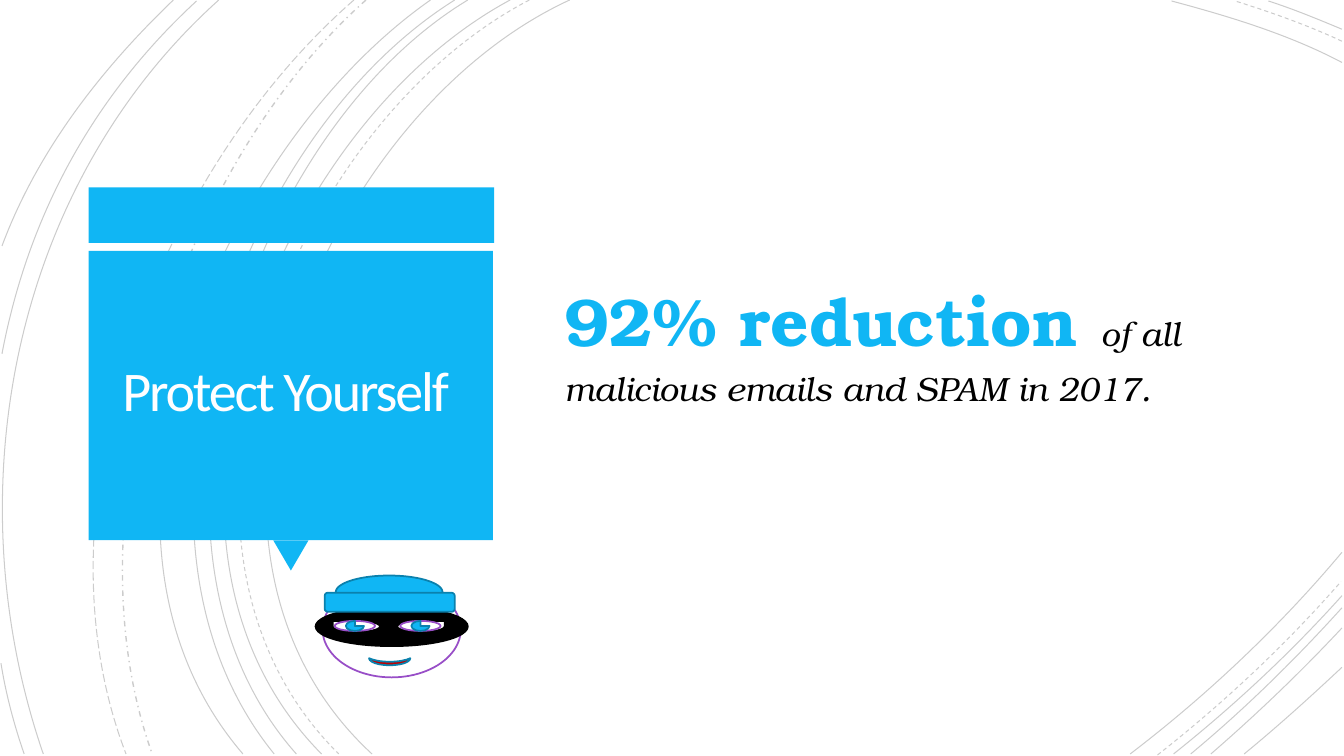
"""Build the slide on protection against malicious mail."""
from dataclasses import dataclass

from lxml import etree
from pptx import Presentation
from pptx.dml.color import RGBColor
from pptx.enum.dml import MSO_LINE
from pptx.enum.shapes import MSO_SHAPE
from pptx.enum.text import MSO_ANCHOR, MSO_AUTO_SIZE, PP_ALIGN
from pptx.oxml.ns import qn
from pptx.util import Cm, Pt

SOLID, DASH = MSO_LINE.SOLID, MSO_LINE.DASH
DOT, LONG = MSO_LINE.DASH_DOT, MSO_LINE.LONG_DASH
RECT, ROUND, OVAL = MSO_SHAPE.RECTANGLE, MSO_SHAPE.ROUNDED_RECTANGLE, MSO_SHAPE.OVAL
WEDGE, TEAR = MSO_SHAPE.ISOSCELES_TRIANGLE, MSO_SHAPE.TEAR
MOON, PIE = MSO_SHAPE.MOON, MSO_SHAPE.PIE
TOP, MIDDLE = MSO_ANCHOR.TOP, MSO_ANCHOR.MIDDLE
LEFT, CENTER = PP_ALIGN.LEFT, PP_ALIGN.CENTER


@dataclass(frozen=True)
class Theme:
    """Colours, fonts and type sizes."""
    blue: str = "10B6F4"
    edge: str = "0B81AD"
    plum: str = "984EC7"
    red: str = "C00000"
    black: str = "000000"
    white: str = "FFFFFF"
    pale: str = "FFFEFF"
    sans: str = "Calibri"
    serif: str = "TeX Gyre Bonum"
    head: int = 40
    big: int = 48
    body: int = 24
    thin: float = 0.75
    pen: float = 1.25


T = Theme()
INCH = 2.54

TITLE = [("Protect Yourself ", dict(size=T.head, font=T.sans, color=T.pale, track=-150))]
CLAIM = [
    ("92% reduction ", dict(size=T.big, font=T.serif, color=T.blue, bold=True)),
    ("of all malicious emails and SPAM in 2017.",
     dict(size=T.body, font=T.serif, color=T.black, italic=True)),
]
TITLE_BOX = (0.97, 2.56, 3.83, 2.7)
CLAIM_BOX = (5.5, 2.56, 6.86, 1.98)

ARCS = {
    (SOLID, T.thin): [
        ((5.65, 0), (3.15, 1.15), (1.43, 5.4), (3.69, 7.48)),
        ((13.31, 0.62), (12.78, 0.34), (12.18, 0.16), (11.62, 0.01)),
        ((11.21, 7.48), (11.97, 6.9), (12.69, 6.22), (13.31, 5.48)),
        ((5.06, 0), (2.7, 1.27), (1.1, 5.37), (3.19, 7.48)),
        ((13.31, 0.29), (13.07, 0.19), (12.83, 0.09), (12.58, 0.01)),
        ((11.64, 7.48), (12.23, 7.01), (12.8, 6.48), (13.31, 5.91)),
        ((4.64, 0), (2.44, 1.33), (1.1, 5.41), (2.94, 7.48)),
        ((11.81, 7.48), (12.34, 7.04), (12.84, 6.55), (13.31, 6.03)),
        ((4.51, 0), (2.31, 1.38), (0.97, 5.33), (2.72, 7.48)),
        ((12.01, 7.48), (12.46, 7.09), (12.9, 6.67), (13.31, 6.23)),
        ((4.27, 0), (2.17, 1.47), (0.53, 5.29), (2.41, 7.48)),
        ((12.34, 7.48), (12.67, 7.21), (12.99, 6.92), (13.31, 6.62)),
        ((2.17, 0), (0.11, 1.85), (-0.46, 4.9), (0.43, 7.48)),
        ((1.95, 0.01), (0.92, 0.96), (0.28, 2.14), (0.02, 3.51)),
        ((0.01, 6.58), (0.06, 6.89), (0.14, 7.19), (0.24, 7.48)),
        ((1.72, 0), (1, 0.69), (0.37, 1.5), (0.02, 2.44)),
    ],
    (DASH, T.thin): [
        ((5.25, 0), (2.85, 1.25), (1.23, 5.37), (3.36, 7.48)),
        ((13.31, 0.41), (12.97, 0.25), (12.6, 0.12), (12.25, 0.01)),
        ((11.48, 7.49), (12.13, 6.98), (12.75, 6.4), (13.3, 5.77)),
    ],
    (DOT, 1): [((3.63, 0), (1.76, 1.66), (0.65, 5.09), (1.51, 7.48))],
    (LONG, T.thin): [((3.51, 0), (1.57, 1.69), (0.29, 4.99), (1.25, 7.48))],
}

PANEL = [
    (RECT, (0.88, 1.86, 4.02, 0.55), 0),
    (WEDGE, (2.71, 5.36, 0.35, 0.3), 180),
    (RECT, (0.88, 2.49, 4.01, 2.87), 0),
]
FACE = [
    (OVAL, (3.2, 5.77, 1.37, 0.95), T.white, T.plum, {}),
    (OVAL, (3.13, 6.02, 1.51, 0.39), T.black, T.black, {}),
    (TEAR, (3.94, 6.16, 0.47, 0.11), T.white, T.black, {}),
    (TEAR, (3.3, 6.16, 0.47, 0.11), T.white, T.black, dict(flip=True)),
    (OVAL, (3.33, 5.71, 1.06, 0.33), T.blue, T.edge, {}),
    (ROUND, (3.22, 5.88, 1.29, 0.19), T.blue, T.edge, {}),
    (MOON, (3.83, 6.36, 0.07, 0.41), T.red, T.edge, dict(turn=270)),
]
EYES = (3.32, 3.97)
EYE_TOP = 6.16


def length(inch):
    """Turn inches into a Cm length."""
    return Cm(inch * INCH)


def rgb(color):
    """Turn a hex string into a colour."""
    return RGBColor.from_string(color)


def draw(slide, kind, box, fill, line=None, turn=0, flip=False):
    """Add one preset shape."""
    shape = slide.shapes.add_shape(kind, *map(length, box))
    shape.shadow.inherit = False
    shape.rotation = turn
    shape.fill.solid()
    shape.fill.fore_color.rgb = rgb(fill)
    if line:
        shape.line.color.rgb = rgb(line)
        shape.line.width = Pt(T.pen)
    else:
        shape.line.fill.background()
    if flip:
        shape.element.spPr.find(qn("a:xfrm")).set("flipH", "1")


def curve(slide, ends, dash, width):
    """Add a faint open arc as one cubic curve."""
    spots = [tuple(map(length, end)) for end in ends]
    pen = slide.shapes.build_freeform(*spots[0])
    pen.add_line_segments(spots[1:], close=False)
    arc = pen.convert_to_shape()
    legs = list(arc.element.spPr.iter(qn("a:lnTo")))
    bend = etree.SubElement(legs[0].getparent(), qn("a:cubicBezTo"))
    for leg in legs:
        bend.append(leg[0])
        leg.getparent().remove(leg)
    arc.shadow.inherit = False
    arc.fill.background()
    arc.line.color.rgb = rgb(T.black)
    arc.line.width = Pt(width)
    arc.line.dash_style = dash
    tone = arc.element.spPr.find(qn("a:ln")).find(".//" + qn("a:srgbClr"))
    etree.SubElement(tone, qn("a:alpha")).set("val", "20000")


def write(shape, runs, box, align=LEFT, anchor=TOP, space=1.0, before=0, pad=0.05):
    """Place a text shape and fill it with styled runs."""
    shape.left, shape.top, shape.width, shape.height = map(length, box)
    frame = shape.text_frame
    frame.word_wrap = True
    frame.auto_size = MSO_AUTO_SIZE.NONE
    frame.vertical_anchor = anchor
    frame.margin_left = frame.margin_right = length(0.1)
    frame.margin_top = frame.margin_bottom = length(pad)
    para = frame.paragraphs[0]
    para.alignment = align
    para.line_spacing = space
    para.space_before = Pt(before)
    for text, look in runs:
        run = para.add_run()
        run.text = text
        font = run.font
        font.name, font.size = look["font"], Pt(look["size"])
        font.color.rgb = rgb(look["color"])
        font.bold = look.get("bold", False)
        font.italic = look.get("italic", False)
        if "track" in look:
            font._element.set("spc", str(look["track"]))


def main():
    """Build and save the deck."""
    deck = Presentation()
    deck.slide_width, deck.slide_height = length(13.33), length(7.5)
    slide = deck.slides.add_slide(deck.slide_layouts[5])
    for (dash, width), arcs in ARCS.items():
        for ends in arcs:
            curve(slide, ends, dash, width)
    for kind, box, turn in PANEL:
        draw(slide, kind, box, T.blue, turn=turn)
    title = slide.shapes.title
    title.element.getparent().append(title.element)
    write(title, TITLE, TITLE_BOX, align=CENTER, anchor=MIDDLE, space=0.85, pad=0.1)
    claim = slide.shapes.add_textbox(*map(length, CLAIM_BOX))
    write(claim, CLAIM, CLAIM_BOX, space=1.2, before=10)
    for kind, box, fill, line, pose in FACE:
        draw(slide, kind, box, fill, line, **pose)
    for left in EYES:
        draw(slide, OVAL, (left, EYE_TOP, 0.4, 0.1), T.white, T.plum)
        draw(slide, PIE, (left + 0.11, EYE_TOP, 0.18, 0.1), T.blue, T.edge)
    deck.save("out.pptx")


if __name__ == "__main__":
    main()
